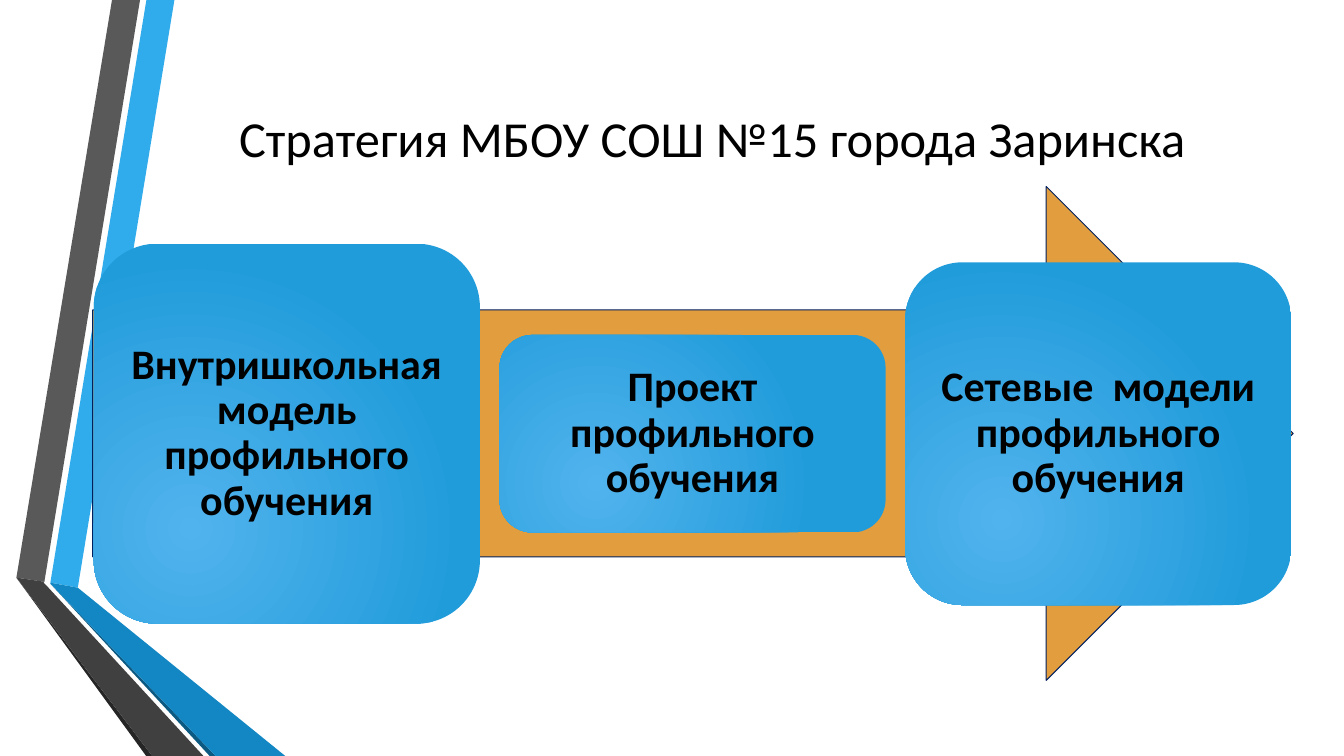
from dataclasses import dataclass

import pptx
import pptx.dml.color
import pptx.enum.shapes
import pptx.enum.text
import pptx.oxml
import pptx.oxml.ns
import pptx.util
from pptx.dml.color import RGBColor

BLACK = RGBColor(0x00, 0x00, 0x00)
ORANGE = RGBColor(0xE2, 0x9D, 0x3E)
NAVY = RGBColor(0x00, 0x20, 0x60)
TILE_INNER = RGBColor(0x51, 0xB3, 0xED)
TILE_OUTER = RGBColor(0x21, 0x9C, 0xDB)
BLUE = RGBColor(0x30, 0xAC, 0xEC)
MID_BLUE = RGBColor(0x12, 0x87, 0xC3)
DARK_BLUE = RGBColor(0x0C, 0x5A, 0x82)
GREY = RGBColor(0x59, 0x59, 0x59)
DARK_GREY = RGBColor(0x40, 0x40, 0x40)
SHADOW_GREY = RGBColor(0x26, 0x26, 0x26)

FONT = "Calibri"
TILE_LEFT, TILE_WIDTH, TILE_STEP, TILE_MIDDLE = 67, 275.8, 289.8, 309.8
TILE_INSET = 8.64


@dataclass
class Ribbon:
    color: RGBColor
    points: list[tuple[float, float]]


@dataclass
class Tile:
    text: str
    height: float


RIBBONS = [
    Ribbon(BLUE, [(36, 416.2), (55.6, 419.8), (124.6, 0), (104.6, 0)]),
    Ribbon(GREY, [(100, 0), (80, 0), (11.7, 412.6), (31.7, 415.6)]),
    Ribbon(SHADOW_GREY, [(11.7, 412.6), (104.4, 540), (108.7, 540)]),
    Ribbon(DARK_BLUE, [(36, 416.9), (149.8, 540), (154.1, 540)]),
    Ribbon(MID_BLUE, [(36, 416.2), (36, 416.9), (154.1, 540), (203.8, 540), (55.6, 419.8)]),
    Ribbon(DARK_GREY, [(145.3, 540), (34.6, 419.8), (31, 416.2), (31.7, 415.6),
                       (11.7, 412.6), (108.7, 540)]),
]

TILES = [
    Tile("Внутришкольная модель профильного обучения", 271.4),
    Tile("Проект профильного обучения", 141.1),
    Tile("Сетевые  модели профильного обучения", 244.8),
]


def pt(value: float) -> pptx.util.Length:
    return pptx.util.Pt(value)


def write(sp, text: str, size: float, bold: bool = False) -> None:
    tf = sp.text_frame
    tf.word_wrap = True
    tf.vertical_anchor = pptx.enum.text.MSO_ANCHOR.MIDDLE
    p = tf.paragraphs[0]
    p.text = text
    p.alignment = pptx.enum.text.PP_ALIGN.CENTER
    p.font.name = FONT
    p.font.size = pt(size)
    p.font.bold = bold
    p.font.color.rgb = BLACK


def draw_ribbon(s, ribbon: Ribbon) -> None:
    start, *rest = [(pt(x), pt(y)) for x, y in ribbon.points]
    builder = s.shapes.build_freeform(*start)
    builder.add_line_segments(rest, close=True)
    sp = builder.convert_to_shape()
    sp.shadow.inherit = False
    sp.fill.solid()
    sp.fill.fore_color.rgb = ribbon.color
    sp.line.fill.background()


def fill_radial(sp) -> None:
    sp.fill.gradient()
    for stop, color in zip(sp.fill.gradient_stops, (TILE_INNER, TILE_OUTER)):
        stop.color.rgb = color
    # Replace the linear direction with a circular one
    lin = sp.element.spPr.find(".//" + pptx.oxml.ns.qn("a:lin"))
    circle = pptx.oxml.parse_xml(
        f'<a:path {pptx.oxml.ns.nsdecls("a")} path="circle">'
        '<a:fillToRect l="50000" t="100000" r="100000" b="50000"/></a:path>')
    lin.getparent().replace(lin, circle)


def draw_tile(s, tile: Tile, index: int) -> None:
    sp = s.shapes.add_shape(
        pptx.enum.shapes.MSO_SHAPE.ROUNDED_RECTANGLE,
        pt(TILE_LEFT + index * TILE_STEP), pt(TILE_MIDDLE - tile.height / 2),
        pt(TILE_WIDTH), pt(tile.height))
    sp.shadow.inherit = False
    fill_radial(sp)
    sp.line.fill.background()
    write(sp, tile.text, 30, bold=True)
    tf = sp.text_frame
    tf.margin_left = tf.margin_right = tf.margin_top = tf.margin_bottom = pt(TILE_INSET)
    tf.paragraphs[0].line_spacing = 0.9


def draw_arrow(s) -> None:
    sp = s.shapes.add_shape(pptx.enum.shapes.MSO_SHAPE.RIGHT_ARROW,
                            pt(66.2), pt(133.2), pt(857.5), pt(352.8))
    sp.shadow.inherit = False
    sp.fill.solid()
    sp.fill.fore_color.rgb = ORANGE
    sp.line.color.rgb = NAVY
    sp.line.width = pt(0.75)


def main() -> None:
    prs = pptx.Presentation()
    prs.slide_width, prs.slide_height = pt(960), pt(540)
    s = prs.slides.add_slide(prs.slide_layouts[6])

    # Folded ribbons on the left
    for ribbon in RIBBONS:
        draw_ribbon(s, ribbon)

    # Title
    title = s.shapes.add_textbox(pt(120.2), pt(54), pt(785.5), pt(87.8))
    write(title, "Стратегия МБОУ СОШ №15 города Заринска ", 36)

    # Arrow with the three stages
    draw_arrow(s)
    for index, tile in enumerate(TILES):
        draw_tile(s, tile, index)

    prs.save("out.pptx")


if __name__ == "__main__":
    main()
